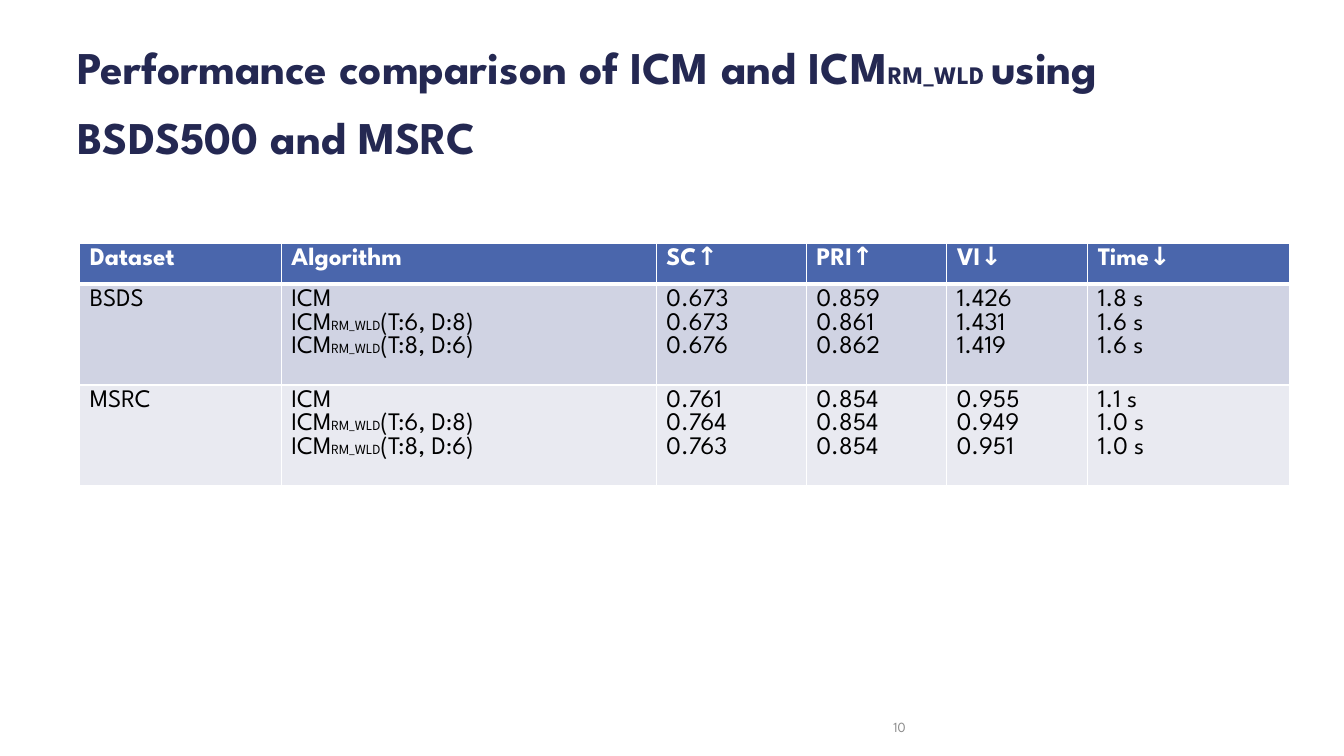
from dataclasses import dataclass

from lxml import etree
from pptx import Presentation, util as u
from pptx.dml import color
from pptx.enum import text
from pptx.oxml import ns


@dataclass(frozen=True)
class Theme:
    font: str = "League Spartan"
    navy: str = "242852"
    white: str = "FFFFFF"
    black: str = "000000"
    gray: str = "8C8C8C"
    header_fill: str = "4A66AC"
    body_fills: tuple = ("D0D3E3", "E9EAF1")
    title_size: float = 32.4
    title_sub_size: float = 18
    table_size: float = 18
    table_sub_size: float = 10
    number_size: float = 10


theme = Theme()
SUB = "RM_WLD"


def write_line(para, line, size, sub_size, tone, bold=False):
    """Fill a paragraph, setting the part between bars in the smaller size."""
    for index, piece in enumerate(line.split("|")):
        span = para.add_run()
        span.text = piece
        span.font.name = theme.font
        span.font.size = u.Pt(sub_size if index % 2 else size)
        span.font.bold = bold
        span.font.color.rgb = color.RGBColor.from_string(tone)


def set_borders(cell, top, bottom):
    """Draw white cell borders; top and bottom widths are in points."""
    props = cell._tc.get_or_add_tcPr()
    for side, width in (("lnL", 1), ("lnR", 1), ("lnT", top), ("lnB", bottom)):
        line = etree.SubElement(props, ns.qn(f"a:{side}"), w=str(u.Pt(width)))
        fill = etree.SubElement(line, ns.qn("a:solidFill"))
        etree.SubElement(fill, ns.qn("a:srgbClr"), val=theme.white)


deck = Presentation()
deck.slide_width, deck.slide_height = u.Inches(13.33), u.Inches(7.5)
page = deck.slides.add_slide(deck.slide_layouts[6])

# Title
title = page.shapes.add_textbox(u.Inches(0.67), u.Inches(0.3), u.Inches(12), u.Inches(1.25))
title.text_frame.word_wrap = True
title.text_frame.vertical_anchor = text.MSO_ANCHOR.MIDDLE
para = title.text_frame.paragraphs[0]
para.line_spacing = 1.3
write_line(para, f"Performance comparison of ICM and ICM|{SUB} |using BSDS500 and MSRC",
           theme.title_size, theme.title_sub_size, theme.navy, True)

# Results table: each cell is a list of lines
algorithms = ["ICM", f"ICM|{SUB}|(T:6, D:8)", f"ICM|{SUB}|(T:8, D:6)"]
rows = [
    [["Dataset"], ["Algorithm"], ["SC↑"], ["PRI↑"], ["VI↓"], ["Time↓"]],
    [["BSDS"], algorithms, ["0.673", "0.673", "0.676"], ["0.859", "0.861", "0.862"],
     ["1.426", "1.431", "1.419"], ["1.8 s", "1.6 s", "1.6 s"]],
    [["MSRC"], algorithms, ["0.761", "0.764", "0.763"], ["0.854", "0.854", "0.854"],
     ["0.955", "0.949", "0.951"], ["1.1 s", "1.0 s", "1.0 s"]],
]
column_widths = [2, 3.72, 1.49, 1.39, 1.4, 2]
row_heights = [0.41, 0.79, 0.79]

results = page.shapes.add_table(
    len(rows), len(column_widths), u.Inches(0.79), u.Inches(2.41),
    u.Inches(sum(column_widths)), u.Inches(sum(row_heights))).table
for column, width in zip(results.columns, column_widths):
    column.width = u.Inches(width)
for row_index, (row, height) in enumerate(zip(rows, row_heights)):
    results.rows[row_index].height = u.Inches(height)
    is_header = row_index == 0
    fill = theme.header_fill if is_header else theme.body_fills[row_index - 1]
    tone = theme.white if is_header else theme.black
    for column_index, lines in enumerate(row):
        cell = results.cell(row_index, column_index)
        set_borders(cell, 3 if row_index == 1 else 1, 3 if is_header else 1)
        cell.fill.solid()
        cell.fill.fore_color.rgb = color.RGBColor.from_string(fill)
        for line_index, line in enumerate(lines):
            frame = cell.text_frame
            para = frame.add_paragraph() if line_index else frame.paragraphs[0]
            write_line(para, line, theme.table_size, theme.table_sub_size, tone, is_header)

# Slide number
number = page.shapes.add_textbox(u.Inches(7.67), u.Inches(7.08), u.Inches(1.41), u.Inches(0.27))
number.text_frame.word_wrap = True
number.text_frame.vertical_anchor = text.MSO_ANCHOR.MIDDLE
para = number.text_frame.paragraphs[0]
para.alignment = text.PP_ALIGN.RIGHT
write_line(para, "10", theme.number_size, theme.number_size, theme.gray)

deck.save("out.pptx")
